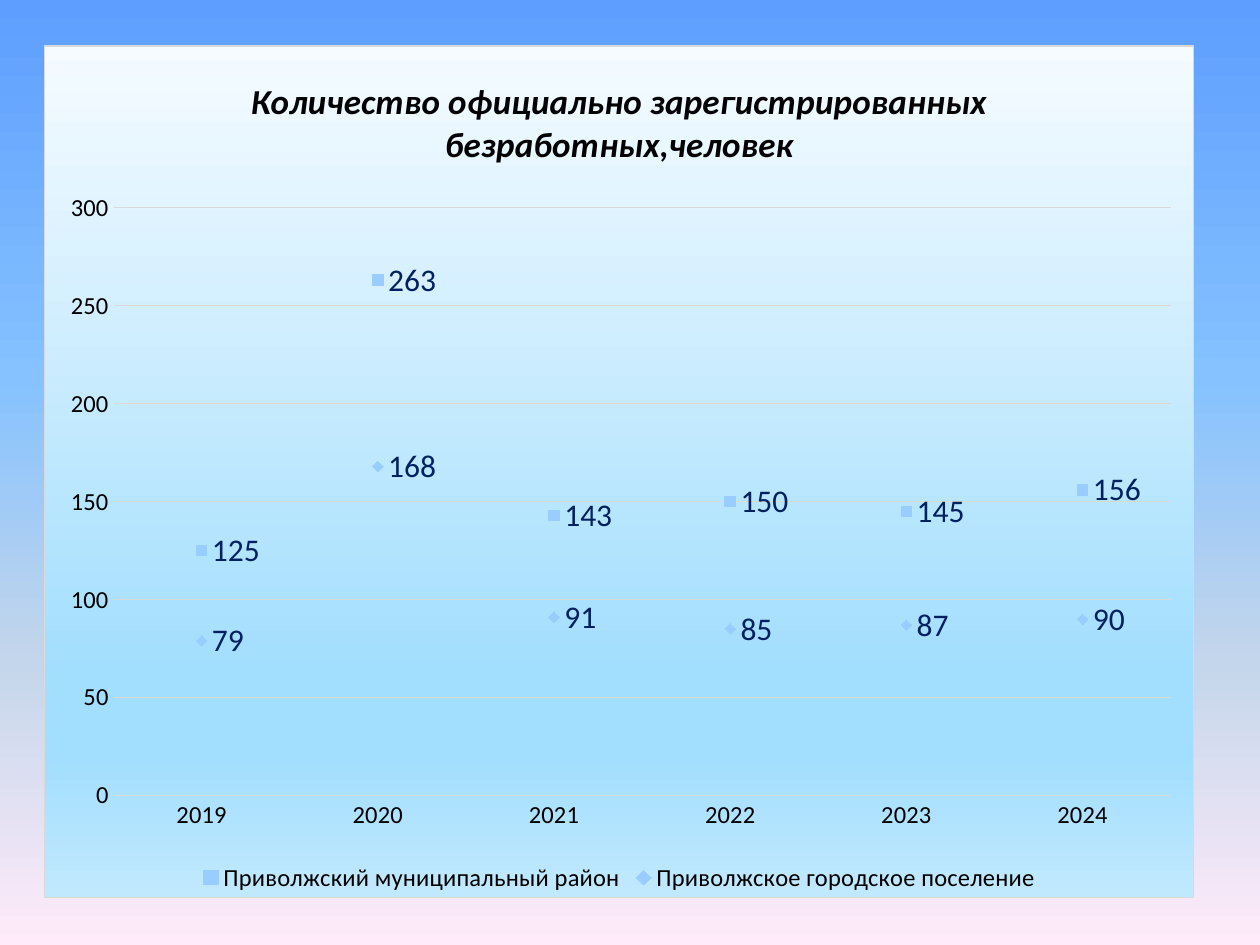
from lxml import etree
from pptx import Presentation
from pptx.chart.data import CategoryChartData
from pptx.dml.color import RGBColor
from pptx.enum.chart import (XL_CHART_TYPE, XL_LABEL_POSITION as LabelPos,
                             XL_LEGEND_POSITION as LegendPos,
                             XL_MARKER_STYLE as Marker, XL_TICK_MARK as Tick)
from pptx.oxml import parse_xml
from pptx.oxml.ns import nsdecls, qn
from pptx.util import Inches, Pt

# Content
TITLE = "Количество официально зарегистрированных безработных,человек"
YEARS = ["2019", "2020", "2021", "2022", "2023", "2024"]
UNEMPLOYED = [
    ("Приволжский муниципальный район", [125, 263, 143, 150, 145, 156], Marker.SQUARE),
    ("Приволжское городское поселение", [79, 168, 91, 85, 87, 90], Marker.DIAMOND),
]

# Theme and layout
THEME = {
    "font": "Calibri", "text": "000000", "label": "002060",
    "marker": "99CCFF", "line": "D9D9D9",
    "title_size": 20, "label_size": 18, "axis_size": 14, "base_size": 10,
    "sky": [(0, "5E9EFF"), (40, "85C2FF"), (70, "C4D6EB"), (100, "FFEBFA")],
    "panel": [(0, "F5FBFF"), (74, "A2DEFE"), (83, "A2DEFE"), (100, "C1E9FE")],
}
PANEL = [Inches(n) for n in (0.35, 0.36, 9.13, 6.77)]
PLOT_SHARES = {"x": 0.06, "y": 0.19, "w": 0.92, "h": 0.69}


def rgb(name):
    return RGBColor.from_string(THEME[name])


def style_font(font, size, color="text", **flags):
    font.name, font.size = THEME["font"], Pt(THEME[size])
    font.color.rgb = rgb(color)
    for flag, value in flags.items():
        setattr(font, flag, value)


def style_line(line):
    line.color.rgb, line.width = rgb("line"), Pt(0.75)


def gradient_xml(stops):
    marks = "".join(f'<a:gs pos="{share * 1000}"><a:srgbClr val="{color}"/></a:gs>'
                    for share, color in stops)
    return (f'<a:gradFill {nsdecls("a")} rotWithShape="1"><a:gsLst>{marks}</a:gsLst>'
            '<a:lin ang="5400000" scaled="0"/></a:gradFill>')


prs = Presentation()
prs.slide_width, prs.slide_height = Inches(10), Inches(7.5)
slide = prs.slides.add_slide(prs.slide_layouts[6])

# Background
slide.background.fill.gradient()
old_gradient = next(slide.element.iter(qn("a:gradFill")))
old_gradient.getparent().replace(old_gradient, parse_xml(gradient_xml(THEME["sky"])))

# Chart
data = CategoryChartData()
data.categories = YEARS
for name, values, _ in UNEMPLOYED:
    data.add_series(name, values)
chart = slide.shapes.add_chart(XL_CHART_TYPE.LINE_MARKERS, *PANEL, data).chart
style_font(chart.font, "base_size")

# Title and legend
chart.has_title = True
heading = chart.chart_title
heading.include_in_layout = False
heading.text_frame.text = TITLE
style_font(heading.text_frame.paragraphs[0].runs[0].font, "title_size",
           bold=True, italic=True)
chart.has_legend = True
chart.legend.position = LegendPos.BOTTOM
chart.legend.include_in_layout = False
style_font(chart.legend.font, "axis_size")

# Axes
years_axis, people_axis = chart.category_axis, chart.value_axis
for axis in (years_axis, people_axis):
    axis.major_tick_mark = axis.minor_tick_mark = Tick.NONE
    style_font(axis.tick_labels.font, "axis_size")
style_line(years_axis.format.line)
people_axis.format.line.fill.background()
people_axis.minimum_scale, people_axis.maximum_scale = 0, 300
people_axis.major_unit = 50
style_line(people_axis.major_gridlines.format.line)

# Series: markers and values without joining lines
chart.plots[0].vary_by_categories = False
for series, (_, _, shape) in zip(chart.plots[0].series, UNEMPLOYED):
    series.smooth = False
    series.format.line.fill.background()
    series.marker.style, series.marker.size = shape, 6
    series.marker.format.fill.solid()
    series.marker.format.fill.fore_color.rgb = rgb("marker")
    series.marker.format.line.fill.background()
    labels = series.data_labels
    labels.show_value, labels.position = True, LabelPos.RIGHT
    style_font(labels.font, "label_size", "label")

# Plot area position
chart_part = chart.element.find(qn("c:chart"))
plot_area = chart_part.find(qn("c:plotArea"))
for layout in plot_area.findall(qn("c:layout")):
    plot_area.remove(layout)
layout = etree.Element(qn("c:layout"))
manual = etree.SubElement(layout, qn("c:manualLayout"))
settings = {"layoutTarget": "inner", "xMode": "edge", "yMode": "edge", **PLOT_SHARES}
for tag, value in settings.items():
    etree.SubElement(manual, qn(f"c:{tag}")).set("val", str(value))
plot_area.insert(0, layout)

# Panel fill and border
chart_part.addnext(parse_xml(
    f'<c:spPr {nsdecls("c", "a")}>{gradient_xml(THEME["panel"])}'
    f'<a:ln w="{Pt(0.75)}"><a:solidFill><a:srgbClr val="{THEME["line"]}"/></a:solidFill>'
    '</a:ln></c:spPr>'))

prs.save("out.pptx")
